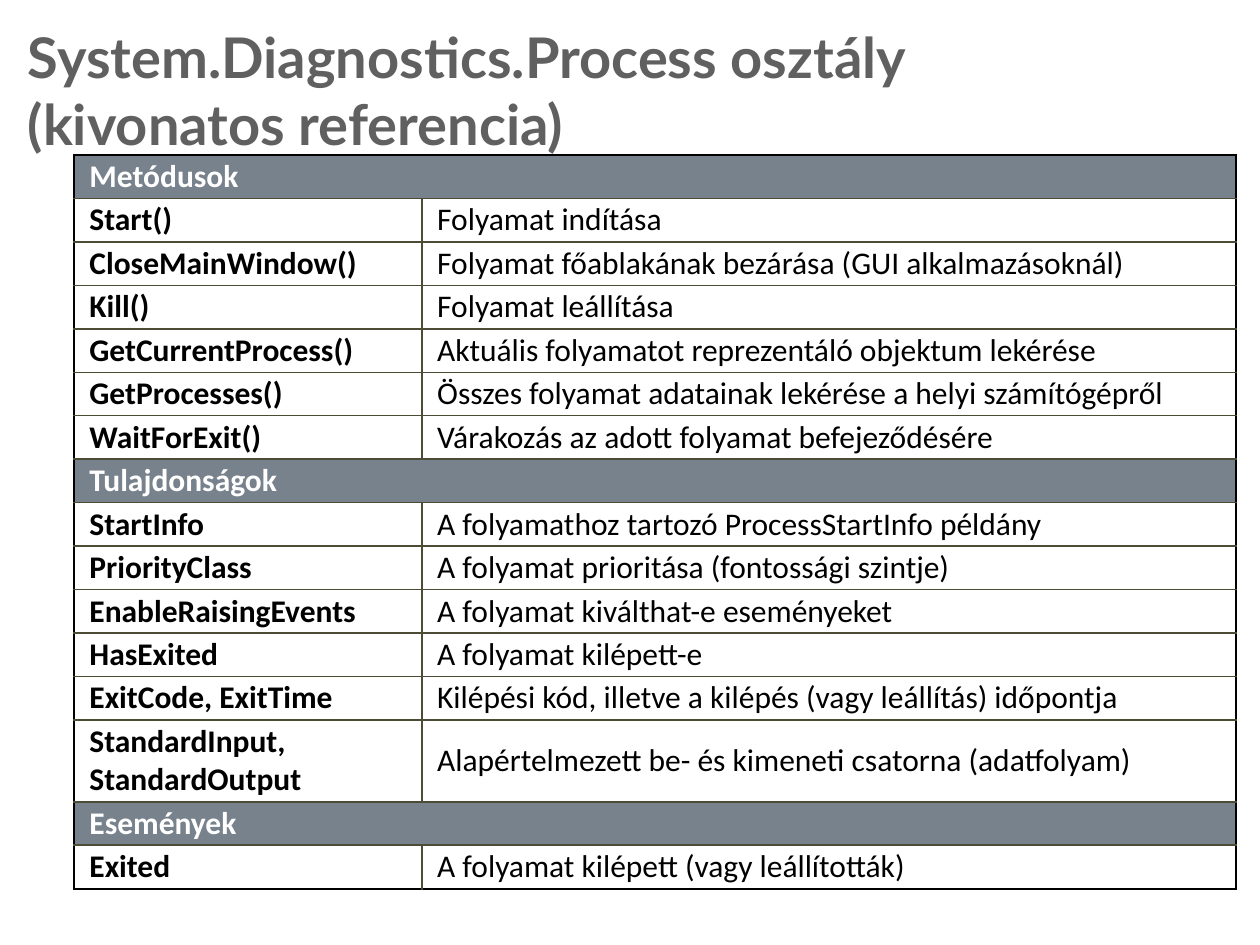
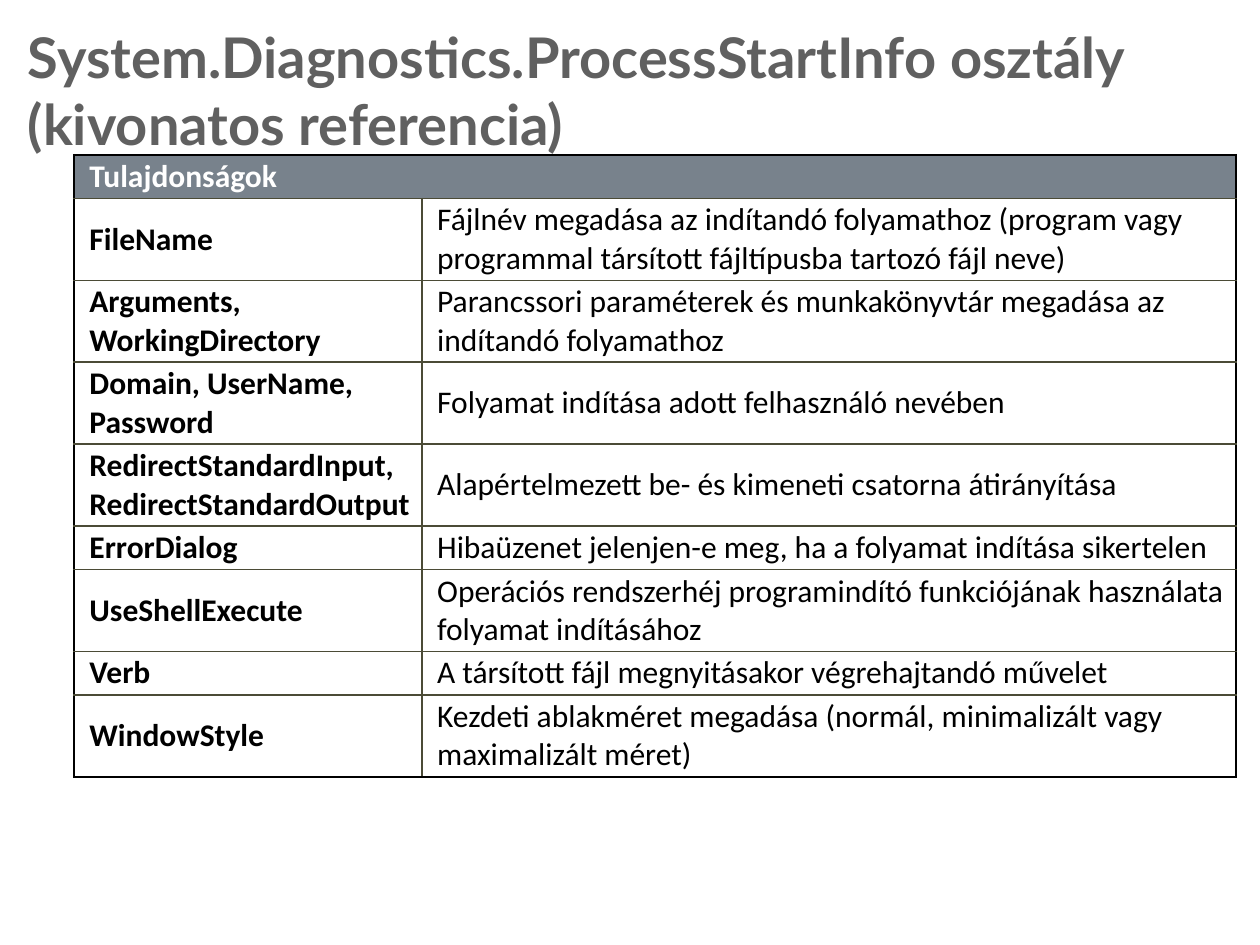
import pptx
import pptx.dml.color
import pptx.enum.text
import pptx.oxml
import pptx.oxml.ns
import pptx.util
import lxml.etree

Inches = pptx.util.Inches
Pt = pptx.util.Pt
Anchor = pptx.enum.text.MSO_ANCHOR

COLORS = {"title": "606060", "band": "78828C", "white": "FFFFFF",
          "text": "000000", "outer": "000000", "inner": "4B4B36"}
WIDTHS = {"outer": 1.5, "inner": 1}
COLS = (2.76, 6.46)
LINE = 0.3
PAD = 0.02

PROCESS = [
    ("Metódusok",),
    ("Start()", "Folyamat indítása"),
    ("CloseMainWindow()", "Folyamat főablakának bezárása (GUI alkalmazásoknál)"),
    ("Kill()", "Folyamat leállítása"),
    ("GetCurrentProcess()", "Aktuális folyamatot reprezentáló objektum lekérése"),
    ("GetProcesses()", "Összes folyamat adatainak lekérése a helyi számítógépről"),
    ("WaitForExit()", "Várakozás az adott folyamat befejeződésére"),
    ("Tulajdonságok",),
    ("StartInfo", "A folyamathoz tartozó ProcessStartInfo példány"),
    ("PriorityClass", "A folyamat prioritása (fontossági szintje)"),
    ("EnableRaisingEvents", "A folyamat kiválthat-e eseményeket"),
    ("HasExited", "A folyamat kilépett-e"),
    ("ExitCode, ExitTime", "Kilépési kód, illetve a kilépés (vagy leállítás) időpontja"),
    ("StandardInput, StandardOutput", "Alapértelmezett be- és kimeneti csatorna (adatfolyam)"),
    ("Események",),
    ("Exited", "A folyamat kilépett (vagy leállították)"),
]

START = [
    ("Tulajdonságok",),
    ("FileName", "Fájlnév megadása az indítandó folyamathoz (program vagy "
     "programmal társított fájltípusba tartozó fájl neve)"),
    ("Arguments, WorkingDirectory",
     "Parancssori paraméterek és munkakönyvtár megadása az indítandó folyamathoz"),
    ("Domain, UserName, Password", "Folyamat indítása adott felhasználó nevében"),
    ("RedirectStandardInput, RedirectStandardOutput",
     "Alapértelmezett be- és kimeneti csatorna átirányítása"),
    ("ErrorDialog", "Hibaüzenet jelenjen-e meg, ha a folyamat indítása sikertelen"),
    ("UseShellExecute",
     "Operációs rendszerhéj programindító funkciójának használata folyamat indításához"),
    ("Verb", "A társított fájl megnyitásakor végrehajtandó művelet"),
    ("WindowStyle",
     "Kezdeti ablakméret megadása (normál, minimalizált vagy maximalizált méret)"),
]


def color(name):
    return pptx.dml.color.RGBColor.from_string(COLORS[name])


class Deck:
    def __init__(self):
        self.file = pptx.Presentation()
        self.file.slide_width = Inches(10)
        self.file.slide_height = Inches(7.5)
        self.slide = None

    def page(self, title):
        self.slide = self.file.slides.add_slide(self.file.slide_layouts[5])
        box = self.slide.shapes.title
        box.left, box.top = Inches(0.12), Inches(0.13)
        box.width, box.height = Inches(9.76), Inches(0.63)
        frame = box.text_frame
        frame.word_wrap = True
        frame.auto_size = pptx.enum.text.MSO_AUTO_SIZE.NONE
        frame.vertical_anchor = Anchor.TOP
        para = frame.paragraphs[0]
        para.alignment = pptx.enum.text.PP_ALIGN.LEFT
        for pos, line in enumerate(title):
            if pos:
                para.add_line_break()
            self.run(para, line, "Lato", 32, "title", True)

    def run(self, para, text, face, size, tint, bold):
        run = para.add_run()
        run.text = text
        font = run.font
        font.name, font.size, font.bold = face, Pt(size), bold
        font.color.rgb = color(tint)

    def table(self, rows, tall):
        heights = [(2 if pos in tall else 1) * LINE + 2 * PAD for pos in range(len(rows))]
        shape = self.slide.shapes.add_table(
            len(rows), len(COLS), Inches(0.59), Inches(1.23),
            Inches(sum(COLS)), Inches(sum(heights)))
        grid = shape.table
        grid.first_row = grid.horz_banding = False
        for col, width in zip(grid.columns, COLS):
            col.width = Inches(width)
        for pos, (texts, height) in enumerate(zip(rows, heights)):
            grid.rows[pos].height = Inches(height)
            band = len(texts) == 1
            top = "outer" if pos == 0 else "inner"
            base = "outer" if pos == len(rows) - 1 else "inner"
            left, right = grid.cell(pos, 0), grid.cell(pos, 1)
            if band:
                left.merge(right)
            for cell in (left, right):
                cell.fill.solid()
                cell.fill.fore_color.rgb = color("band" if band else "white")
            self.edges(left, L="outer", R="outer" if band else "inner", T=top, B=base)
            self.edges(right, L=None if band else "inner", R="outer", T=top, B=base)
            for col, text in enumerate(texts):
                self.cell(grid.cell(pos, col), text, "white" if band else "text", col == 0)

    def cell(self, cell, text, tint, bold):
        cell.vertical_anchor = Anchor.MIDDLE
        cell.margin_left, cell.margin_right = Inches(0.12), 0
        cell.margin_top = cell.margin_bottom = Inches(PAD)
        self.run(cell.text_frame.paragraphs[0], text, "Calibri", 18, tint, bold)

    def edges(self, cell, **sides):
        qn = pptx.oxml.ns.qn
        props = cell._tc.get_or_add_tcPr()
        drawn = [(side, kind) for side, kind in sides.items() if kind]
        for pos, (side, kind) in enumerate(drawn):
            line = lxml.etree.Element(qn("a:ln" + side), w=str(Pt(WIDTHS[kind])))
            fill = lxml.etree.SubElement(line, qn("a:solidFill"))
            lxml.etree.SubElement(fill, qn("a:srgbClr"), val=COLORS[kind])
            props.insert(pos, line)


def main():
    deck = Deck()
    note = "(kivonatos referencia)"
    deck.page(["System.Diagnostics.Process osztály", note])
    deck.table(PROCESS, {13})
    deck.page(["System.Diagnostics.ProcessStartInfo osztály", note])
    deck.table(START, {1, 2, 3, 4, 6, 8})
    deck.file.save("out.pptx")


if __name__ == "__main__":
    main()
